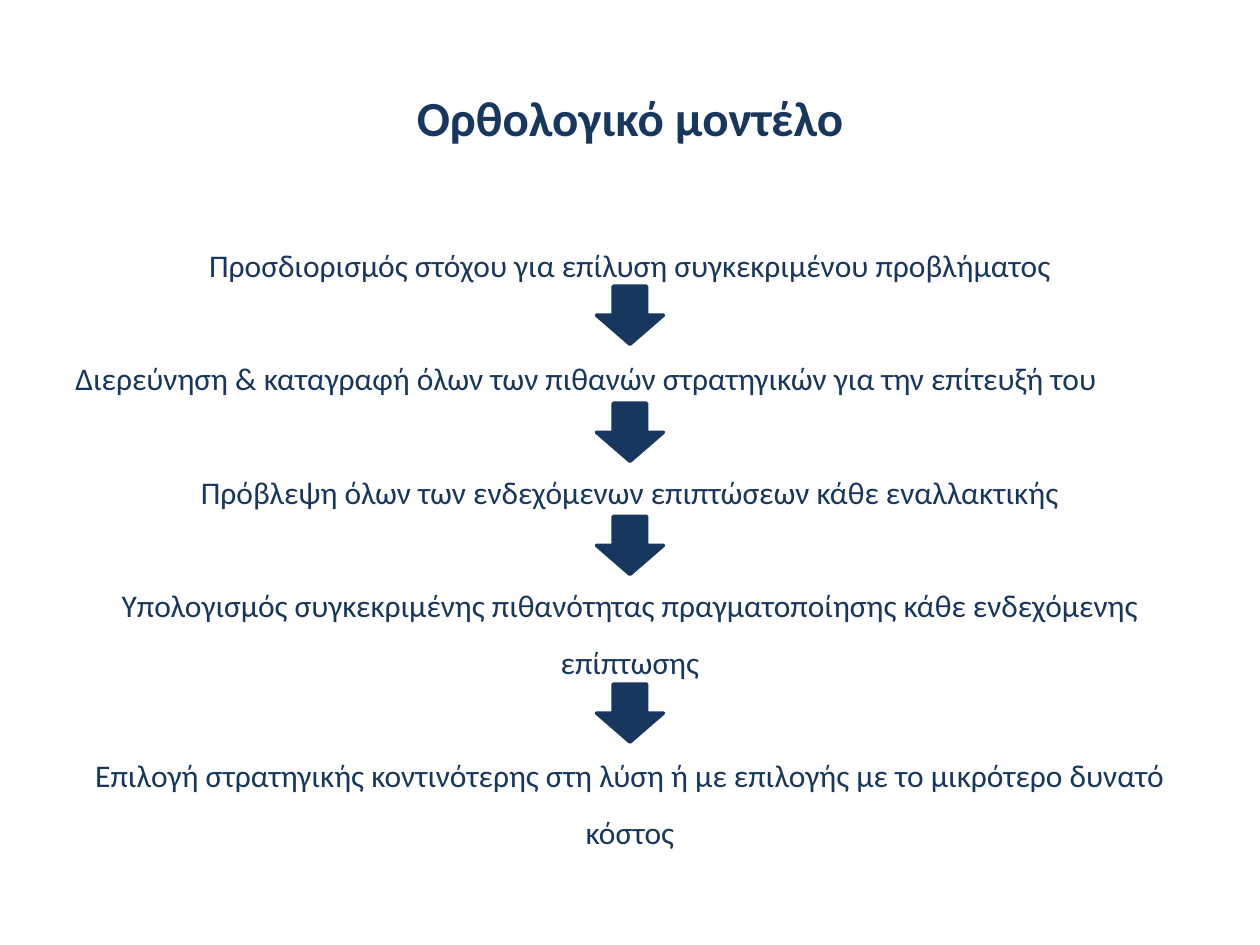
"""Build a slide showing the rational model as steps joined by down arrows."""
from dataclasses import dataclass
from typing import Optional

from pptx import Presentation
from pptx.dml.color import RGBColor
from pptx.enum.shapes import MSO_SHAPE
from pptx.enum.text import MSO_ANCHOR, PP_ALIGN
from pptx.slide import Slide
from pptx.text.text import TextFrame, _Paragraph
from pptx.util import Cm, Length, Pt


@dataclass(frozen=True)
class Theme:
    navy: RGBColor = RGBColor(0x17, 0x37, 0x5E)
    font: str = "Calibri"
    title_size: Length = Pt(28)
    body_size: Length = Pt(18)
    line_spacing: float = 1.5
    step_gap: Length = Pt(32.4)
    arrow_line: Length = Pt(2)


@dataclass(frozen=True)
class Step:
    text: str
    arrow_top: Optional[Length] = None
    alignment: PP_ALIGN = PP_ALIGN.CENTER


THEME = Theme()
SLIDE_WIDTH, SLIDE_HEIGHT = Cm(25.4), Cm(19.05)
MARGIN = Cm(1.27)
ARROW_WIDTH, ARROW_HEIGHT = Cm(1.35), Cm(1.17)
TITLE = "Ορθολογικό μοντέλο"
STEPS = [
    Step("Προσδιορισμός στόχου για επίλυση συγκεκριμένου προβλήματος", Cm(5.77)),
    Step("Διερεύνηση & καταγραφή όλων των πιθανών στρατηγικών για την επίτευξή του",
         Cm(8.13), PP_ALIGN.JUSTIFY),
    Step("Πρόβλεψη όλων των ενδεχόμενων επιπτώσεων κάθε εναλλακτικής", Cm(10.41)),
    Step("Υπολογισμός συγκεκριμένης πιθανότητας πραγματοποίησης κάθε ενδεχόμενης επίπτωσης",
         Cm(13.79)),
    Step("Επιλογή στρατηγικής κοντινότερης στη λύση ή με επιλογής με το μικρότερο δυνατό κόστος"),
]


def add_text_frame(slide: Slide, top: Length, height: Length) -> TextFrame:
    box = slide.shapes.add_textbox(MARGIN, top, SLIDE_WIDTH - 2 * MARGIN, height)
    box.text_frame.word_wrap = True
    return box.text_frame


def style_paragraph(paragraph: _Paragraph, size: Length, alignment: PP_ALIGN,
                    bold: bool = False) -> None:
    paragraph.alignment = alignment
    for run in paragraph.runs:
        run.font.name = THEME.font
        run.font.size = size
        run.font.bold = bold
        run.font.color.rgb = THEME.navy


def add_title(slide: Slide) -> None:
    text_frame = add_text_frame(slide, Cm(0.76), Cm(3.18))
    text_frame.vertical_anchor = MSO_ANCHOR.MIDDLE
    text_frame.text = TITLE
    style_paragraph(text_frame.paragraphs[0], THEME.title_size, PP_ALIGN.CENTER, bold=True)


def add_steps(slide: Slide, steps: list[Step]) -> None:
    text_frame = add_text_frame(slide, Cm(4.45), Cm(12.57))
    text_frame.text = "\n".join(step.text for step in steps)
    for paragraph, step in zip(text_frame.paragraphs, steps):
        style_paragraph(paragraph, THEME.body_size, step.alignment)
        paragraph.line_spacing = THEME.line_spacing
        paragraph.space_after = THEME.step_gap if step.arrow_top else Pt(0)


def add_down_arrow(slide: Slide, top: Length) -> None:
    left = (SLIDE_WIDTH - ARROW_WIDTH) // 2
    arrow = slide.shapes.add_shape(MSO_SHAPE.DOWN_ARROW, left, top, ARROW_WIDTH, ARROW_HEIGHT)
    arrow.shadow.inherit = False
    arrow.fill.solid()
    arrow.fill.fore_color.rgb = THEME.navy
    arrow.line.color.rgb = THEME.navy
    arrow.line.width = THEME.arrow_line


def main() -> None:
    presentation = Presentation()
    presentation.slide_width, presentation.slide_height = SLIDE_WIDTH, SLIDE_HEIGHT
    slide = presentation.slides.add_slide(presentation.slide_layouts[6])
    add_title(slide)
    add_steps(slide, STEPS)
    for step in STEPS:
        if step.arrow_top:
            add_down_arrow(slide, step.arrow_top)
    presentation.save("out.pptx")


if __name__ == "__main__":
    main()
